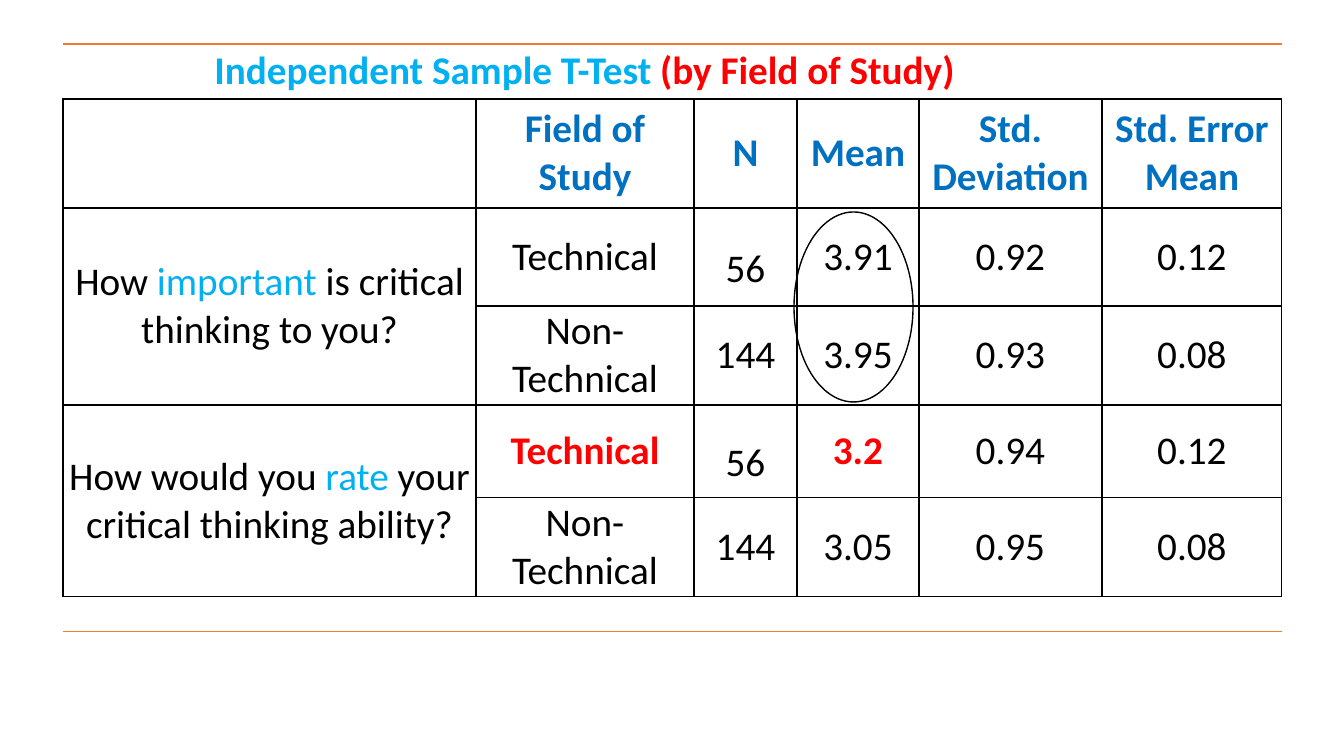
"""Build a slide with a t-test table grouped by field of study."""
from lxml import etree
from pptx import Presentation
from pptx.dml.color import RGBColor
from pptx.enum.shapes import MSO_SHAPE
from pptx.enum.text import MSO_ANCHOR, PP_ALIGN
from pptx.oxml.ns import qn
from pptx.util import Pt

OVAL, MIDDLE, CENTER = MSO_SHAPE.OVAL, MSO_ANCHOR.MIDDLE, PP_ALIGN.CENTER
BLACK = RGBColor(0x00, 0x00, 0x00)
WHITE = RGBColor(0xFF, 0xFF, 0xFF)
RED = RGBColor(0xFF, 0x00, 0x00)
SKY = RGBColor(0x00, 0xB0, 0xF0)
BLUE = RGBColor(0x00, 0x70, 0xC0)
ORANGE = RGBColor(0xED, 0x7D, 0x31)

WIDE, HIGH = 1344, 756
SCALE = 12192000 / WIDE
LEFT, TOP = 63, 44
COLS = [413, 218, 103, 122, 183, 3, 176]
ROWS = [55, 109, 98, 99, 93, 99, 35]
RING = (794, 212, 119, 190)

TITLE = [("Independent Sample T-Test ", SKY), ("(by Field of Study)", RED)]
HEADS = ["Field of\nStudy", "N", "Mean", "Std. Deviation", "Std. Error Mean"]
ASKS = {
    2: [("How", BLACK), (" important ", SKY), ("is critical thinking to you?", BLACK)],
    4: [("How would you ", BLACK), ("rate ", SKY), ("your critical thinking ability?", BLACK)],
}
DATA = [
    ["Technical", "56", "3.91", "0.92", "0.12"],
    ["Non-Technical", "144", "3.95", "0.93", "0.08"],
    ["Technical", "56", "3.2", "0.94", "0.12"],
    ["Non-Technical", "144", "3.05", "0.95", "0.08"],
]
HOT = {(4, 1), (4, 3)}
LOOSE = {(2, 2), (4, 2)}
LAST = len(ROWS) - 1


def emu(px):
    return round(px * SCALE)


def edge(cell, side, color):
    line = etree.SubElement(cell._tc.get_or_add_tcPr(), qn("a:ln" + side), w=str(Pt(1)))
    if color is None:
        etree.SubElement(line, qn("a:noFill"))
    else:
        fill = etree.SubElement(line, qn("a:solidFill"))
        etree.SubElement(fill, qn("a:srgbClr"), val=str(color))


def style(cell, row):
    side = None if row in (0, LAST) else BLACK
    edge(cell, "L", side)
    edge(cell, "R", side)
    edge(cell, "T", ORANGE if row == 0 else BLACK)
    edge(cell, "B", ORANGE if row == LAST else BLACK)
    cell.fill.background()
    cell.margin_left = cell.margin_right = cell.margin_top = cell.margin_bottom = 0
    cell.vertical_anchor = MIDDLE


def write(cell, runs, bold=False, space=None):
    frame = cell.text_frame
    para = frame.paragraphs[0]
    for text, color in runs:
        for i, part in enumerate(text.split("\n")):
            if i:
                para = frame.add_paragraph()
            run = para.add_run()
            run.text = part
            run.font.color.rgb = color
    for para in frame.paragraphs:
        para.alignment = CENTER
        para.line_spacing = space
        para.font.name = "Calibri"
        para.font.size = Pt(28)
        para.font.bold = bold


def add_ring(slide):
    ring = slide.shapes.add_shape(OVAL, *map(emu, RING))
    ring.shadow.inherit = False
    ring.fill.solid()
    ring.fill.fore_color.rgb = WHITE
    ring.line.color.rgb = BLACK
    ring.line.width = Pt(1)


def add_grid(slide):
    box = map(emu, (LEFT, TOP, sum(COLS), sum(ROWS)))
    table = slide.shapes.add_table(len(ROWS), len(COLS), *box).table
    table.first_row = table.horz_banding = False
    for col, px in zip(table.columns, COLS):
        col.width = emu(px)
    for r, px in enumerate(ROWS):
        table.rows[r].height = emu(px)
        for cell in table.rows[r].cells:
            style(cell, r)

    table.cell(0, 0).merge(table.cell(0, 5))
    for r in range(1, LAST):
        table.cell(r, 5).merge(table.cell(r, 6))
    write(table.cell(0, 0), TITLE, bold=True)
    for r, runs in ASKS.items():
        table.cell(r, 0).merge(table.cell(r + 1, 0))
        write(table.cell(r, 0), runs)
    for c, text in enumerate(HEADS, 1):
        write(table.cell(1, c), [(text, BLUE)], bold=True)
    for r, line in enumerate(DATA, 2):
        for c, text in enumerate(line, 1):
            hot = (r, c) in HOT
            space = 1.5 if (r, c) in LOOSE else None
            write(table.cell(r, c), [(text, RED if hot else BLACK)], hot, space)


def main():
    deck = Presentation()
    deck.slide_width, deck.slide_height = emu(WIDE), emu(HIGH)
    slide = deck.slides.add_slide(deck.slide_layouts[6])
    add_ring(slide)
    add_grid(slide)
    deck.save("out.pptx")


if __name__ == "__main__":
    main()
